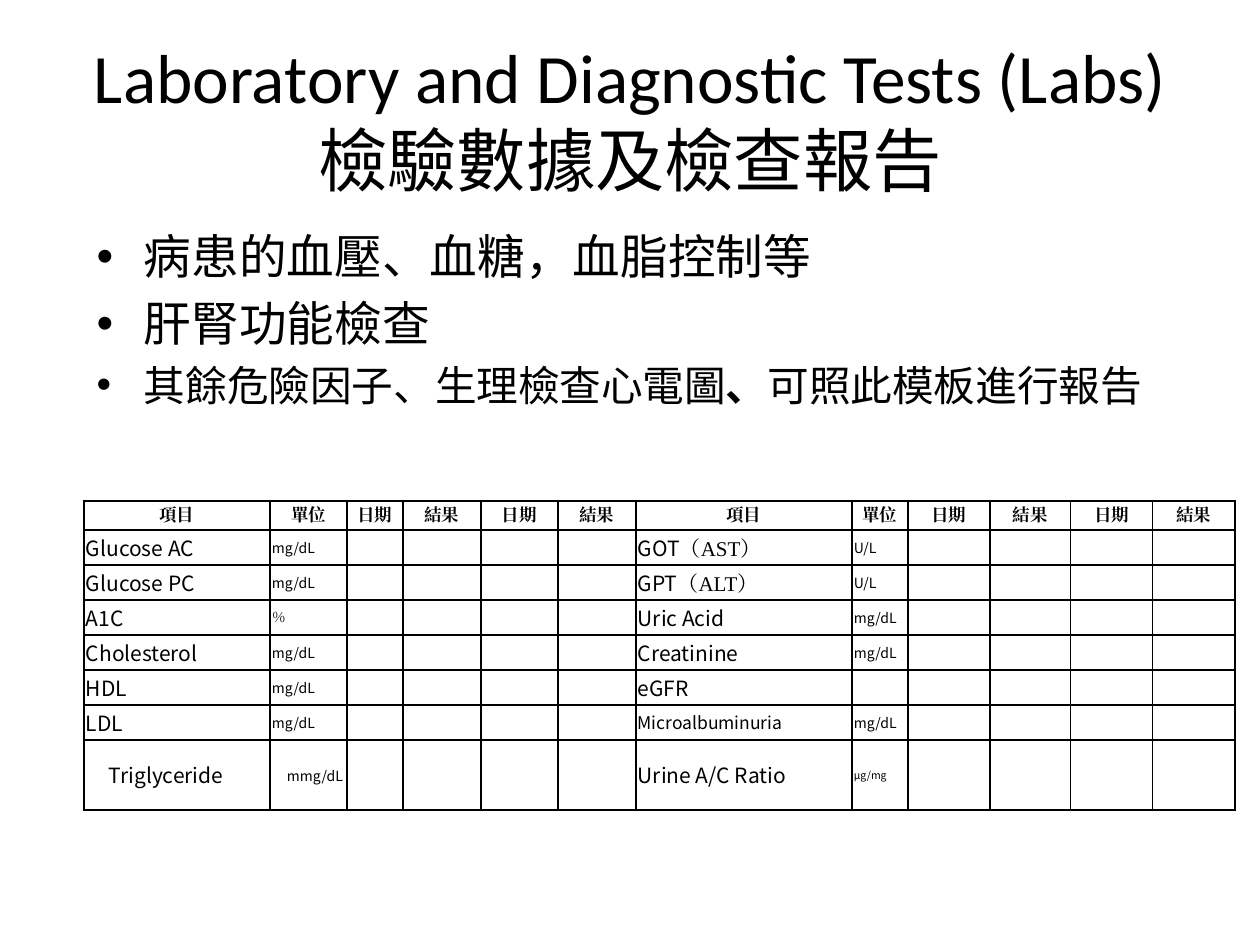
from dataclasses import dataclass

from lxml import etree
from pptx import Presentation, util as u
from pptx.dml.color import RGBColor
from pptx.enum import text
from pptx.oxml import ns

PX = 914400 / 126


@dataclass(frozen=True)
class Theme:
    ink: str = "000000"
    main: str = "Calibri"
    sans: str = "Noto Sans CJK SC"
    serif: str = "Times New Roman"
    title: float = 39.6
    bullet: float = 27.2
    small_bullet: float = 23.8
    head: float = 10
    item: float = 12
    unit: float = 8
    inner_line: float = 1
    outer_line: float = 1.5


THEME = Theme()

TITLE = "Laboratory and Diagnostic Tests (Labs)\v檢驗數據及檢查報告"
BULLETS = [
    (THEME.bullet, ["病患的血壓、血糖，血脂控制等"]),
    (THEME.bullet, ["肝腎功能檢查"]),
    (THEME.small_bullet, ["其餘危險因子、生理檢查心電圖", "、", "可照此模板進行報告"]),
]
HEADINGS = ["項目", "單位", "日期", "結果", "日期", "結果"] * 2
TESTS = [
    ("Glucose AC", "mg/dL", "GOT（AST）", "U/L"),
    ("Glucose PC", "mg/dL", "GPT（ALT）", "U/L"),
    ("A1C", "％", "Uric Acid", "mg/dL"),
    ("Cholesterol", "mg/dL", "Creatinine", "mg/dL"),
    ("HDL", "mg/dL", "eGFR", ""),
    ("LDL", "mg/dL", "Microalbuminuria", "mg/dL"),
    ("Triglyceride", "mmg/dL", "Urine A/C Ratio", "μg/mg"),
]
ITEM_COLUMNS = (0, 1, 6, 7)
SPECIAL_SIZES = {"Microalbuminuria": 10, "μg/mg": 6}
FIRST_LINE_INDENTS = {"Triglyceride": 23, "mmg/dL": 15}
COLUMN_WIDTHS = [186, 77, 56, 78, 77, 78, 216, 56, 82, 81, 82, 82]
ROW_HEIGHTS = [29] + [35] * 6 + [70]


def px(value):
    return u.Emu(round(value * PX))


def place(shape, box):
    shape.left, shape.top, shape.width, shape.height = map(px, box)


def style(span, size, face, bold=False):
    span.font.size = u.Pt(size)
    span.font.name = face
    span.font.bold = bold
    span.font.color.rgb = RGBColor.from_string(THEME.ink)
    # East Asian characters follow the same face
    latin = span.font._element.find(ns.qn("a:latin"))
    east = etree.Element(ns.qn("a:ea"), typeface=face)
    latin.addnext(east)


def add_title(page, box):
    title = page.shapes.title
    place(title, box)
    frame = title.text_frame
    frame.auto_size = text.MSO_AUTO_SIZE.NONE
    frame.text = TITLE
    for span in frame.paragraphs[0].runs:
        style(span, THEME.title, THEME.main)


def add_bullets(page, box):
    body = page.placeholders[1]
    place(body, box)
    frame = body.text_frame
    frame.auto_size = text.MSO_AUTO_SIZE.NONE
    for index, (size, parts) in enumerate(BULLETS):
        para = frame.add_paragraph() if index else frame.paragraphs[0]
        for part in parts:
            span = para.add_run()
            span.text = part
            style(span, size, THEME.main, bold=part == "、")


def set_borders(cell, row, column):
    outer = {
        "L": column == 0,
        "R": column == len(COLUMN_WIDTHS) - 1,
        "T": row == 0,
        "B": row == len(ROW_HEIGHTS) - 1,
    }
    properties = cell._tc.get_or_add_tcPr()
    for side, is_outer in outer.items():
        width = THEME.outer_line if is_outer else THEME.inner_line
        line = etree.SubElement(properties, ns.qn(f"a:ln{side}"), w=str(u.Pt(width)))
        fill = etree.SubElement(line, ns.qn("a:solidFill"))
        etree.SubElement(fill, ns.qn("a:srgbClr"), val=THEME.ink)


def fill_cell(cell, words, row, column):
    para = cell.text_frame.paragraphs[0]
    if not words:
        # Small end mark keeps empty rows at their height
        etree.SubElement(para._p, ns.qn("a:endParaRPr"), sz=str(THEME.item * 100))
        return
    if row == 0:
        para.text = words
        para.alignment = text.PP_ALIGN.CENTER
        style(para.runs[0], THEME.head, THEME.serif, bold=True)
        return
    para.alignment = text.PP_ALIGN.JUSTIFY
    if words in FIRST_LINE_INDENTS:
        para._p.get_or_add_pPr().set("indent", str(px(FIRST_LINE_INDENTS[words])))
    default = THEME.item if column in (0, 6) else THEME.unit
    size = SPECIAL_SIZES.get(words, default)
    name, bracket, rest = words.partition("（")
    for part, face in ((name, THEME.sans), (bracket + rest, THEME.serif)):
        if part:
            span = para.add_run()
            span.text = part
            style(span, size, THEME.serif if part == "％" else face)


def add_lab_table(page, left, top):
    box = (left, top, sum(COLUMN_WIDTHS), sum(ROW_HEIGHTS))
    table = page.shapes.add_table(
        len(ROW_HEIGHTS), len(COLUMN_WIDTHS), *map(px, box)).table
    table.first_row = table.horz_banding = False
    for column, width in zip(table.columns, COLUMN_WIDTHS):
        column.width = px(width)
    for row, height in zip(table.rows, ROW_HEIGHTS):
        row.height = px(height)

    # Headings first, then one test pair per row with blank result cells
    content = [dict(enumerate(HEADINGS))]
    content += [dict(zip(ITEM_COLUMNS, test)) for test in TESTS]
    for row, words in enumerate(content):
        for column in range(len(COLUMN_WIDTHS)):
            cell = table.cell(row, column)
            cell.margin_left = cell.margin_right = px(2)
            cell.margin_top = cell.margin_bottom = 0
            cell.vertical_anchor = text.MSO_ANCHOR.MIDDLE
            set_borders(cell, row, column)
            cell.fill.background()
            fill_cell(cell, words.get(column, ""), row, column)


def main():
    deck = Presentation()
    deck.slide_width, deck.slide_height = px(1260), px(945)
    page = deck.slides.add_slide(deck.slide_layouts[1])
    add_title(page, (63, 38, 1134, 158))
    add_bullets(page, (84, 221, 1124, 203))
    add_lab_table(page, 84, 501)
    deck.save("out.pptx")


if __name__ == "__main__":
    main()
